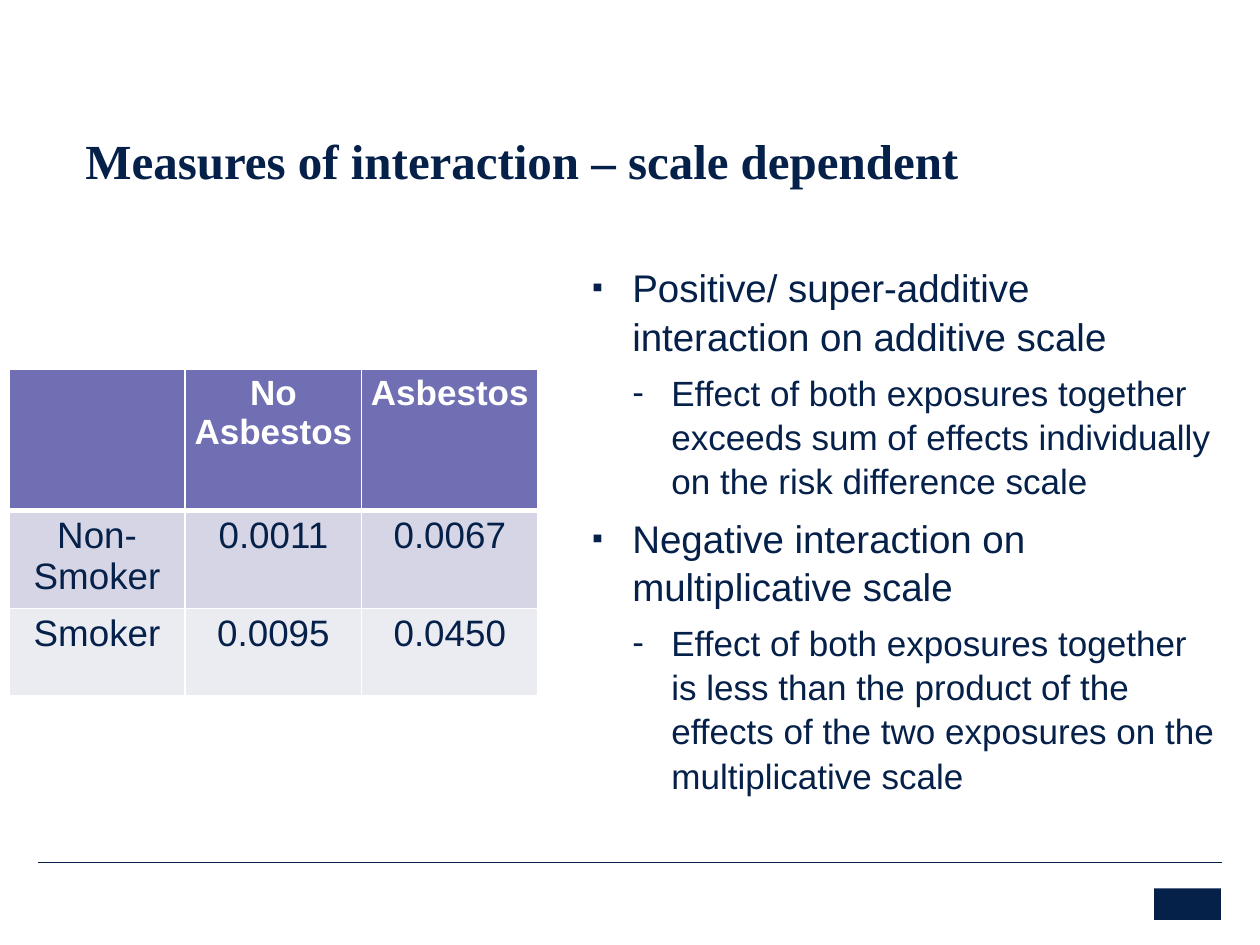
from lxml import etree
from pptx import Presentation
from pptx.dml.color import RGBColor
from pptx.enum.shapes import MSO_CONNECTOR, MSO_SHAPE
from pptx.enum.text import MSO_ANCHOR, PP_ALIGN
from pptx.oxml.ns import qn
from pptx.util import Inches, Pt

NAVY = RGBColor(0x05, 0x20, 0x49)
WHITE = RGBColor(0xFF, 0xFF, 0xFF)
PURPLE = RGBColor(0x71, 0x6F, 0xB3)
LILAC = RGBColor(0xD5, 0xD5, 0xE5)
PALE = RGBColor(0xEB, 0xEB, 0xF2)
LINE, RECT = MSO_CONNECTOR.STRAIGHT, MSO_SHAPE.RECTANGLE
TOP, BOTTOM = MSO_ANCHOR.TOP, MSO_ANCHOR.BOTTOM
LEFT, CENTER = PP_ALIGN.LEFT, PP_ALIGN.CENTER

TITLE = "Measures of interaction – scale dependent"
POINTS = [
    (0, "Positive/ super-additive interaction on additive scale"),
    (1, "Effect of both exposures together exceeds sum of effects "
        "individually on the risk difference scale"),
    (0, "Negative interaction on multiplicative scale"),
    (1, "Effect of both exposures together is less than the product of "
        "the effects of the two exposures on the multiplicative scale"),
]
RISKS = [
    ("", "No Asbestos", "Asbestos"),
    ("Non-Smoker", "0.0011", "0.0067"),
    ("Smoker", "0.0095", "0.0450"),
]
# Format of each bullet level: size, text indent, hang, mark, mark size
LEVELS = [(22, 0.32, 0.32, "▪", 80), (20, 0.63, 0.31, "-", 100)]


def write(par, text, size=20, font="Arial", color=NAVY, bold=False,
          align=LEFT, space=1.0, after=0):
    par.alignment = align
    par.line_spacing = space
    par.space_after = Pt(after)
    run = par.add_run()
    run.text = text
    run.font.size = Pt(size)
    run.font.name = font
    run.font.bold = bold
    run.font.color.rgb = color


def add_box(slide, left, top, width, height, anchor=TOP):
    box = slide.shapes.add_textbox(
        Inches(left), Inches(top), Inches(width), Inches(height))
    frame = box.text_frame
    frame.word_wrap = True
    frame.vertical_anchor = anchor
    return frame


def add_mark(par, indent, hang, mark, scale):
    props = par._p.get_or_add_pPr()
    props.set("marL", str(Inches(indent)))
    props.set("indent", str(-Inches(hang)))
    color = etree.SubElement(props, qn("a:buClr"))
    etree.SubElement(color, qn("a:srgbClr"), val=str(NAVY))
    etree.SubElement(props, qn("a:buSzPct"), val=str(scale * 1000))
    etree.SubElement(props, qn("a:buFont"), typeface="Arial")
    etree.SubElement(props, qn("a:buChar"), char=mark)


def add_points(slide):
    frame = add_box(slide, 4.6, 2.03, 5.15, 4.58)
    for i, (level, text) in enumerate(POINTS):
        par = frame.add_paragraph() if i else frame.paragraphs[0]
        par.level = level
        size, *mark = LEVELS[level]
        write(par, text, size=size, space=1.05, after=6)
        add_mark(par, *mark)


def add_edges(cell, widths):
    props = cell._tc.get_or_add_tcPr()
    for side, width in zip("LRTB", widths):
        edge = etree.SubElement(props, qn("a:ln" + side), w=str(Pt(width)))
        fill = etree.SubElement(edge, qn("a:solidFill"))
        etree.SubElement(fill, qn("a:srgbClr"), val=str(WHITE))


def add_risks(slide):
    table = slide.shapes.add_table(
        3, 3, Inches(0.07), Inches(2.93), Inches(4.2), Inches(2.59)).table
    for col in table.columns:
        col.width = Inches(1.4)
    for r, (height, fill) in enumerate(
            [(1.12, PURPLE), (0.78, LILAC), (0.69, PALE)]):
        table.rows[r].height = Inches(height)
        head = r == 0
        for c, text in enumerate(RISKS[r]):
            cell = table.cell(r, c)
            cell.margin_left = cell.margin_right = Inches(0.07)
            cell.margin_top = cell.margin_bottom = Inches(0.04)
            # The rule under the head row is thicker
            add_edges(cell, (1, 1, 3 if r == 1 else 1, 3 if head else 1))
            cell.fill.solid()
            cell.fill.fore_color.rgb = fill
            if text:
                write(cell.text_frame.paragraphs[0], text, bold=head,
                      size=20 if head else 21, align=CENTER,
                      color=WHITE if head else NAVY)


def add_rule(slide, left, right, y):
    rule = slide.shapes.add_connector(
        LINE, Inches(left), Inches(y), Inches(right), Inches(y))
    rule.line.color.rgb = NAVY
    rule.line.width = Pt(0.25)
    etree.SubElement(rule._element.spPr, qn("a:effectLst"))


def add_block(slide, left, top, width, height):
    block = slide.shapes.add_shape(
        RECT, Inches(left), Inches(top), Inches(width), Inches(height))
    block.shadow.inherit = False
    block.fill.solid()
    block.fill.fore_color.rgb = NAVY
    block.line.fill.background()


def main():
    deck = Presentation()
    deck.slide_width, deck.slide_height = Inches(10), Inches(7.5)
    slide = deck.slides.add_slide(deck.slide_layouts[6])

    # Footer: rule and plain block
    add_rule(slide, 0.3, 9.7, 6.84)
    add_block(slide, 9.16, 7.05, 0.53, 0.25)

    # Title
    frame = add_box(slide, 0.58, 1.04, 8.85, 0.51, anchor=BOTTOM)
    write(frame.paragraphs[0], TITLE, size=28, font="Times New Roman",
          bold=True, space=0.85)

    # Content
    add_points(slide)
    add_risks(slide)
    deck.save("out.pptx")


if __name__ == "__main__":
    main()
